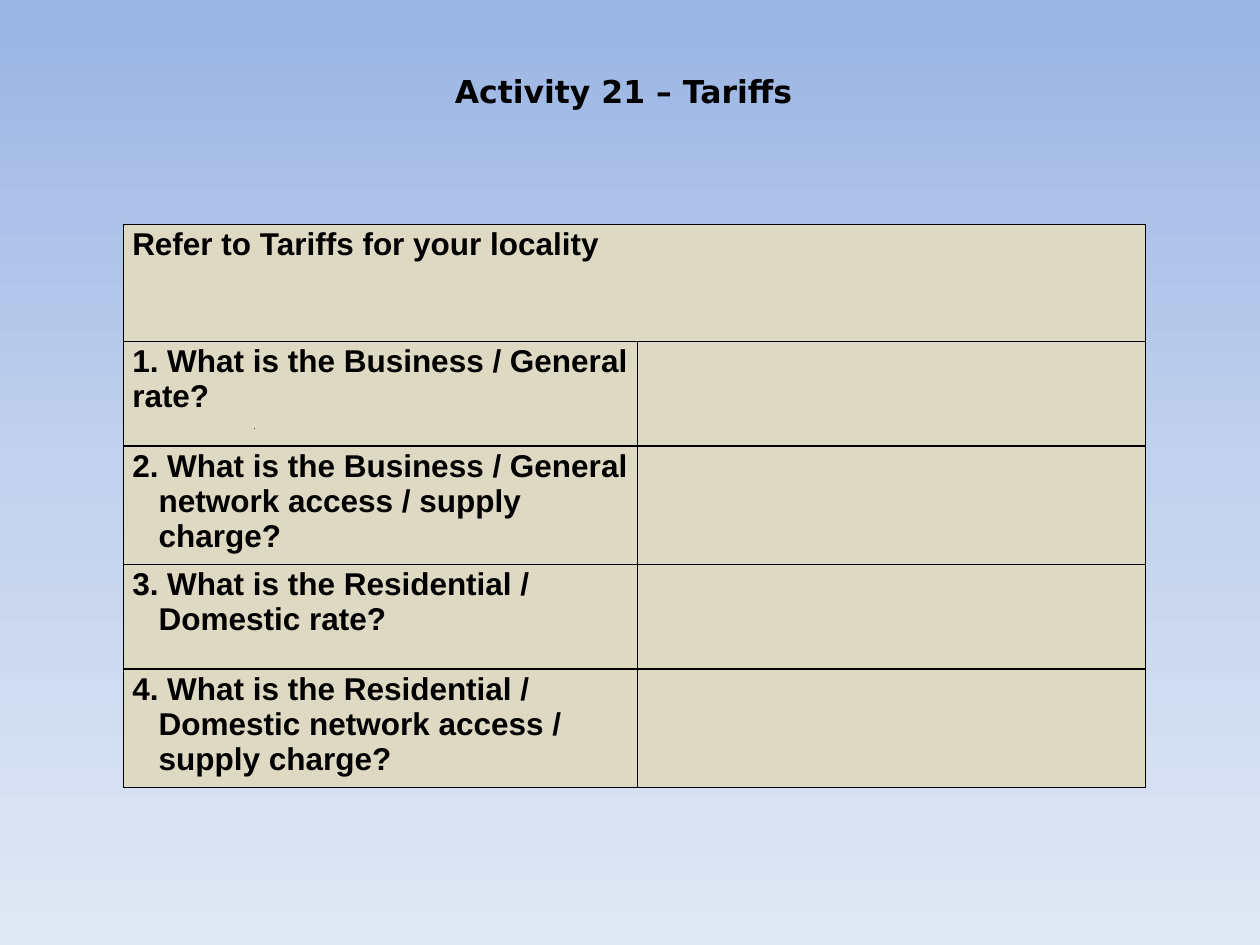
from copy import deepcopy
from dataclasses import dataclass

from lxml import etree
from pptx import Presentation
from pptx.dml.color import RGBColor
from pptx.enum.shapes import MSO_SHAPE
from pptx.enum.text import MSO_ANCHOR, MSO_AUTO_SIZE, PP_ALIGN
from pptx.oxml.ns import qn
from pptx.slide import Slide
from pptx.table import _Cell
from pptx.util import Inches, Pt

RECTANGLE = MSO_SHAPE.RECTANGLE
TOP = MSO_ANCHOR.TOP
FIT_SHAPE = MSO_AUTO_SIZE.SHAPE_TO_FIT_TEXT
LEFT, JUSTIFY = PP_ALIGN.LEFT, PP_ALIGN.JUSTIFY
TITLE_ONLY = 5


@dataclass(frozen=True)
class Theme:
    ink: str = "000000"
    cell: str = "DDD9C3"
    dot: str = "4F81BD"
    sky: tuple = ((0, "9AB5E4"), (0.5, "C2D1ED"), (1, "E1E8F5"))
    title_font: str = "DejaVu Sans"
    body_font: str = "Arial"
    size: int = 18
    border: int = 1


@dataclass(frozen=True)
class Entry:
    text: str
    height: float = 0.83
    hanging: float = 0.21
    before: int = 3
    after: int = 12
    align: PP_ALIGN = LEFT


THEME = Theme()
COLUMNS = (4.08, 4.03)
ENTRIES = (
    Entry("Refer to Tariffs for your locality", 0.93, 0, 6, 0, JUSTIFY),
    Entry("1. What is the Business / General rate?", hanging=0),
    Entry("2. What is the Business / General network access / supply charge?"),
    Entry("3. What is the Residential / Domestic rate?"),
    Entry("4. What is the Residential / Domestic network access / supply charge?"),
)


def apply(target: object, values: dict) -> None:
    for name, value in values.items():
        setattr(target, name, value)


def style_font(font: object, name: str) -> None:
    apply(font, {"name": name, "size": Pt(THEME.size), "bold": True})
    font.color.rgb = RGBColor.from_string(THEME.ink)


def paint_background(slide: Slide) -> None:
    fill = slide.background.fill
    fill.gradient()
    fill.gradient_angle = 270
    stop_list = slide.element.xpath(".//p:bg//a:gsLst")[0]
    stop_list.append(deepcopy(stop_list[0]))
    for stop, (position, color) in zip(fill.gradient_stops, THEME.sky):
        stop.position = position
        stop.color.rgb = RGBColor.from_string(color)


def add_title(slide: Slide, text: str) -> None:
    title = slide.shapes.title
    apply(title, {"left": Inches(3.51), "top": Inches(0.52),
                  "width": Inches(2.99), "height": Inches(0.4)})
    frame = title.text_frame
    frame.text = text
    apply(frame, {"word_wrap": False, "auto_size": FIT_SHAPE, "vertical_anchor": TOP})
    para = frame.paragraphs[0]
    para.alignment = LEFT
    style_font(para.font, THEME.title_font)


def style_cell(cell: _Cell) -> None:
    properties = cell._tc.get_or_add_tcPr()
    for side in ("a:lnL", "a:lnR", "a:lnT", "a:lnB"):
        line = etree.SubElement(properties, qn(side), w=str(Pt(THEME.border)))
        solid = etree.SubElement(line, qn("a:solidFill"))
        etree.SubElement(solid, qn("a:srgbClr"), val=THEME.ink)
    cell.fill.solid()
    cell.fill.fore_color.rgb = RGBColor.from_string(THEME.cell)
    apply(cell, {"margin_left": Inches(0.07), "margin_right": Inches(0.07),
                 "margin_top": Inches(0.02), "margin_bottom": Inches(0.02)})


def write_entry(cell: _Cell, entry: Entry) -> None:
    cell.text = entry.text
    para = cell.text_frame.paragraphs[0]
    apply(para, {"alignment": entry.align, "space_before": Pt(entry.before),
                 "space_after": Pt(entry.after)})
    if entry.hanging:
        indent = Inches(entry.hanging)
        properties = para._p.get_or_add_pPr()
        properties.set("marL", str(indent))
        properties.set("indent", str(-indent))
    style_font(para.runs[0].font, THEME.body_font)


def add_tariff_table(slide: Slide) -> None:
    height = sum(entry.height for entry in ENTRIES)
    table = slide.shapes.add_table(
        len(ENTRIES), len(COLUMNS), Inches(0.98), Inches(1.78),
        Inches(sum(COLUMNS)), Inches(height)).table
    apply(table, {"first_row": False, "horz_banding": False})
    for column, width in zip(table.columns, COLUMNS):
        column.width = Inches(width)
    for row, entry in zip(table.rows, ENTRIES):
        row.height = Inches(entry.height)
        for cell in row.cells:
            style_cell(cell)
        write_entry(row.cells[0], entry)
    table.cell(0, 0).merge(table.cell(0, 1))


def add_dot(slide: Slide) -> None:
    dot = slide.shapes.add_shape(RECTANGLE, Inches(2.02), Inches(3.4), 0, 0)
    dot.shadow.inherit = False
    dot.fill.solid()
    dot.fill.fore_color.rgb = RGBColor.from_string(THEME.dot)
    dot.line.color.rgb = RGBColor.from_string(THEME.ink)
    dot.line.width = Pt(0.75)


def main() -> None:
    deck = Presentation()
    apply(deck, {"slide_width": Inches(10), "slide_height": Inches(7.5)})
    page = deck.slides.add_slide(deck.slide_layouts[TITLE_ONLY])
    paint_background(page)
    add_title(page, "Activity 21 – Tariffs")
    add_tariff_table(page)
    add_dot(page)
    deck.save("out.pptx")


if __name__ == "__main__":
    main()
